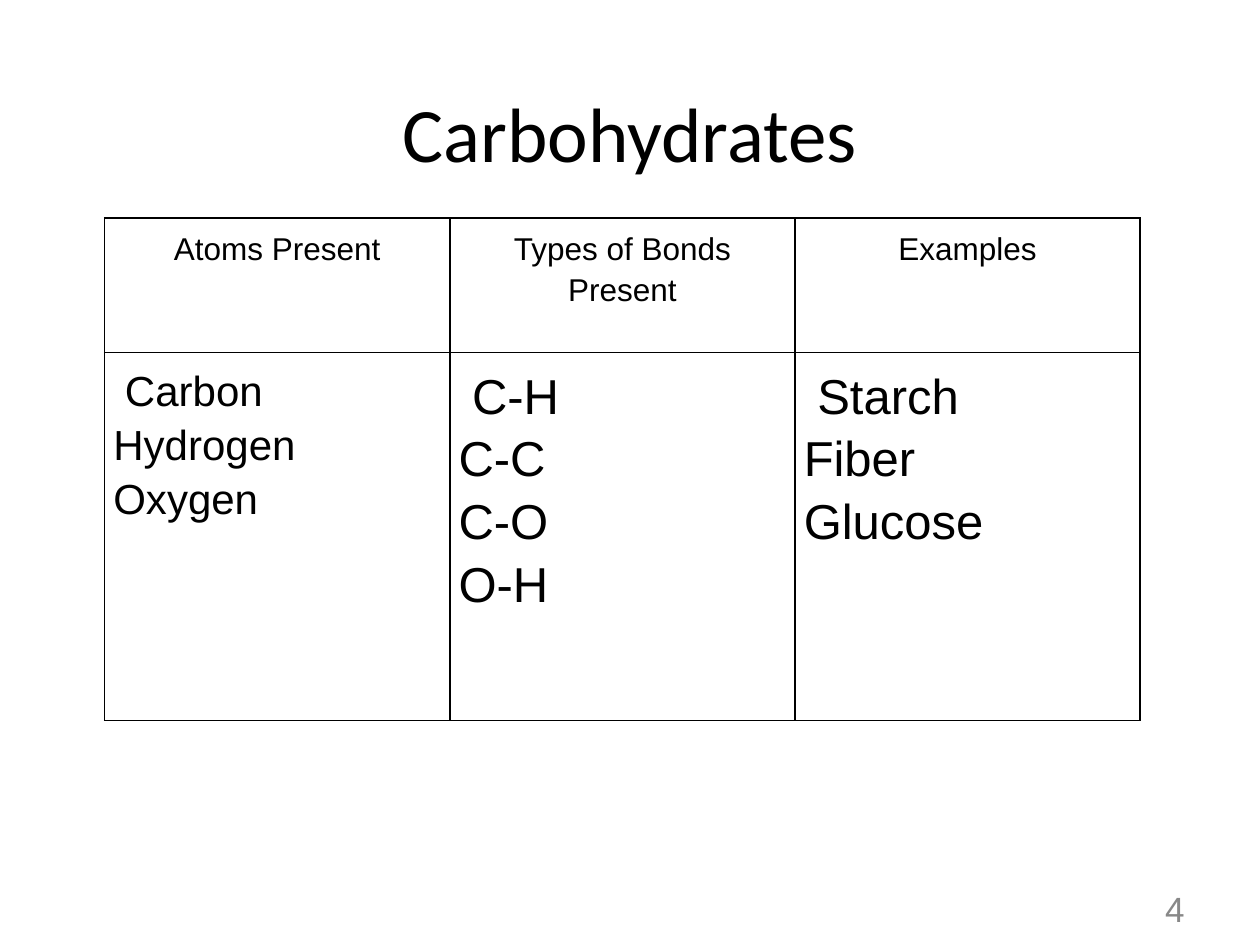
"""Build a slide with a table on carbohydrates."""
from lxml import etree
from pptx import Presentation
from pptx.dml.color import RGBColor
from pptx.enum import text
from pptx.oxml import ns
from pptx.util import Inches, Pt

LEFT, MID, RIGHT = text.PP_ALIGN.LEFT, text.PP_ALIGN.CENTER, text.PP_ALIGN.RIGHT


def style(frame, size, align, font="Arial", color="000000", space=1.0):
    frame.word_wrap = True
    for para in frame.paragraphs:
        para.alignment = align
        para.line_spacing = space
        for run in para.runs:
            run.font.size = Pt(size)
            run.font.name = font
            run.font.color.rgb = RGBColor.from_string(color)


def border(cell, color="000000", width=1):
    props = cell._tc.get_or_add_tcPr()
    for side in ("a:lnL", "a:lnR", "a:lnT", "a:lnB"):
        line = etree.SubElement(props, ns.qn(side), w=str(Pt(width)))
        fill = etree.SubElement(line, ns.qn("a:solidFill"))
        etree.SubElement(fill, ns.qn("a:srgbClr"), val=color)


deck = Presentation()
deck.slide_width, deck.slide_height = Inches(10), Inches(7.5)
slide = deck.slides.add_slide(deck.slide_layouts[6])

labels = [
    ("Carbohydrates", (0.5, 0.5, 9, 1.09), 44, MID, "Calibri", "000000"),
    ("4", (7.17, 7.01, 2.33, 0.4), 20, RIGHT, "Arial", "888888"),
]
for words, place, size, align, font, color in labels:
    box = slide.shapes.add_textbox(*[Inches(n) for n in place])
    box.text_frame.text = words
    box.text_frame.vertical_anchor = text.MSO_ANCHOR.MIDDLE
    style(box.text_frame, size, align, font, color)

columns = [
    ("Atoms Present", " Carbon\nHydrogen\nOxygen", 24),
    ("Types of Bonds Present", " C-H\nC-C\nC-O\nO-H", 28),
    ("Examples", " Starch\nFiber\nGlucose", 28),
]
table = slide.shapes.add_table(
    2, 3, Inches(0.83), Inches(1.73), Inches(8.21), Inches(3.99)).table
table.first_row = table.horz_banding = False
table.rows[0].height, table.rows[1].height = Inches(1.07), Inches(2.92)

for col, (head, body, size) in enumerate(columns):
    table.columns[col].width = Inches(2.74)
    for row, (words, points, align) in enumerate(
            [(head, 18, MID), (body, size, LEFT)]):
        cell = table.cell(row, col)
        cell.text_frame.text = words
        style(cell.text_frame, points, align, space=1.15)
        cell.margin_left = cell.margin_right = Inches(0.07)
        cell.margin_top = cell.margin_bottom = Inches(0.07)
        border(cell)
        cell.fill.background()

deck.save("out.pptx")
